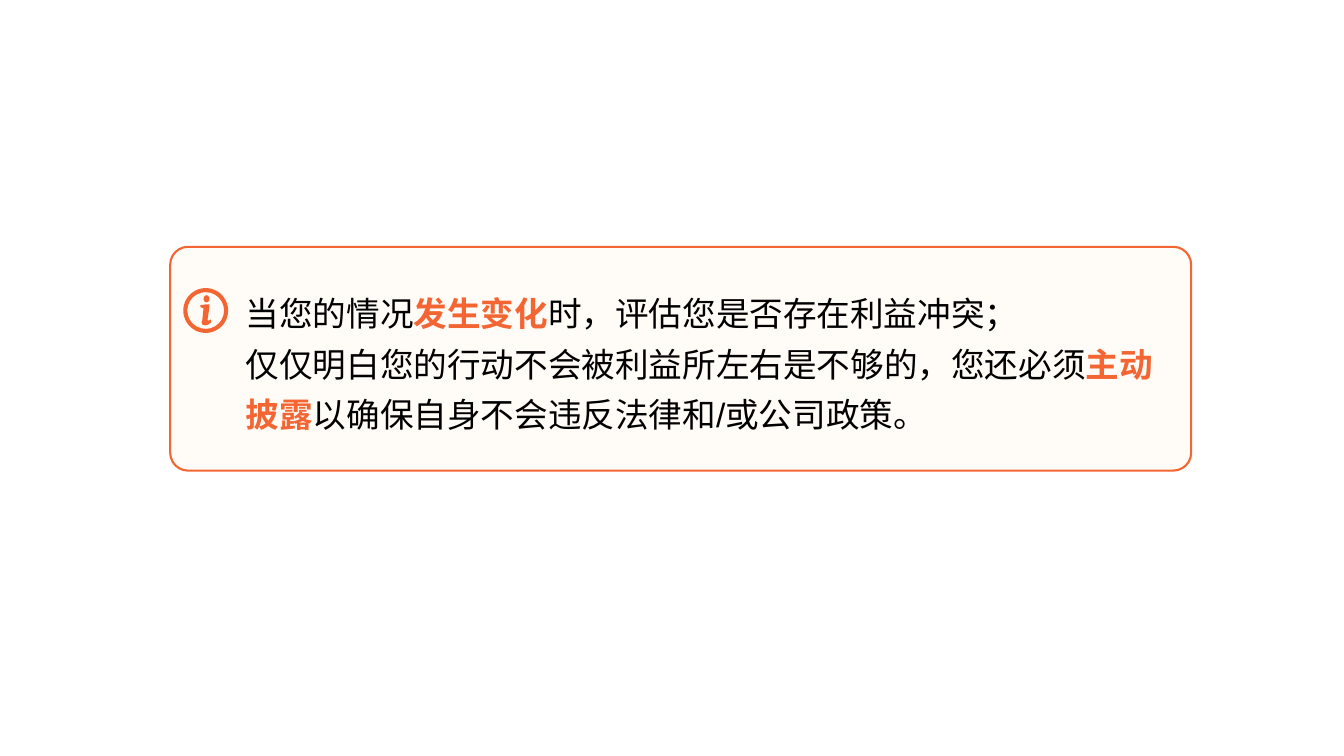
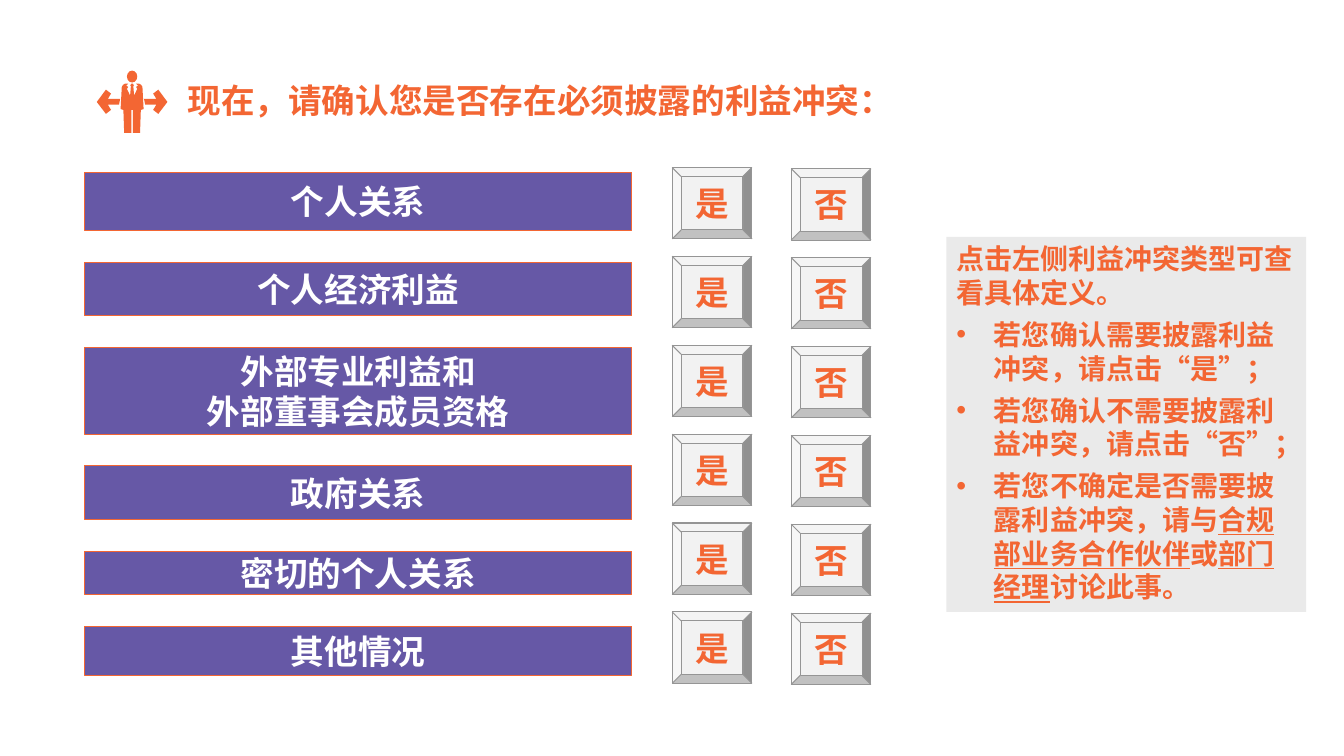
from lxml.etree import SubElement
from pptx import Presentation
from pptx.dml.color import RGBColor
from pptx.enum.shapes import MSO_SHAPE
from pptx.enum.text import MSO_ANCHOR, MSO_AUTO_SIZE, PP_ALIGN
from pptx.oxml.ns import qn
from pptx.util import Cm, Pt

FONT = "Arial"
ORANGE = "F36633"
PURPLE = "6658A6"
CREAM = "FFFCF7"
LIGHT_GREY = "EAEAEA"
BUTTON_GREY = "F2F2F2"
EDGE_GREY = "959595"
WHITE = "FFFFFF"
BLACK = "000000"

NOTICE = [
    [("当您的情况", False), ("发生变化", True), ("时，评估您是否存在利益冲突；", False)],
    [("仅仅明白您的行动不会被利益所左右是不够的，您还必须", False), ("主动披露", True),
     ("以确保自身不会违反法律和/或公司政策。", False)],
]
TITLE = "现在，请确认您是否存在必须披露的利益冲突："
# Label and bar height in cm
CONFLICT_TYPES = [
    ("个人关系", 1.47),
    ("个人经济利益", 1.35),
    ("外部专业利益和\n外部董事会成员资格", 2.18),
    ("政府关系", 1.35),
    ("密切的个人关系", 1.09),
    ("其他情况", 1.24),
]
GUIDE_LEAD = "点击左侧利益冲突类型可查看具体定义。"
# Each bullet is a list of text and underline pairs
GUIDE_BULLETS = [
    [("若您确认需要披露利益冲突，请点击“是”；", False)],
    [("若您确认不需要披露利益冲突，请点击“否”；", False)],
    [("若您不确定是否需要披露利益冲突，请与", False), ("合规部业务合作伙伴", True),
     ("或", False), ("部门经理", True), ("讨论此事。", False)],
]


def colour(value):
    return RGBColor.from_string(value)


def add_box(shapes, kind, left, top, width, height, fill, line=None, weight=0.75):
    box = shapes.add_shape(kind, Cm(left), Cm(top), Cm(width), Cm(height))
    style_box(box, fill, line, weight)
    return box


def style_box(box, fill, line=None, weight=0.75):
    box.shadow.inherit = False
    box.fill.solid()
    box.fill.fore_color.rgb = colour(fill)
    if line:
        box.line.color.rgb = colour(line)
        box.line.width = Pt(weight)
    else:
        box.line.fill.background()


def add_outline(shapes, left, top, points, fill):
    """Draw a closed outline from points in cm, measured from left and top."""
    corners = [(Cm(left + x), Cm(top + y)) for x, y in points]
    builder = shapes.build_freeform(*corners[0])
    builder.add_line_segments(corners[1:], close=True)
    style_box(builder.convert_to_shape(), fill)


def format_font(font, size, text_colour, bold):
    font.name = FONT
    font.size = Pt(size)
    font.bold = bold
    font.color.rgb = colour(text_colour)


def set_text(box, text, size, text_colour, align=PP_ALIGN.CENTER):
    box.text_frame.text = text
    for para in box.text_frame.paragraphs:
        para.alignment = align
        for span in para.runs:
            format_font(span.font, size, text_colour, True)


def next_paragraph(frame, first):
    para = frame.paragraphs[0] if first else frame.add_paragraph()
    para.alignment = PP_ALIGN.LEFT
    return para


def add_span(para, text):
    span = para.add_run()
    span.text = text
    return span


def add_info_icon(page, left, top):
    shapes = page.shapes.add_group_shape().shapes
    ring = add_box(shapes, MSO_SHAPE.DONUT, left, top, 1.13, 1.13, ORANGE)
    ring.adjustments[0] = 0.09
    add_box(shapes, MSO_SHAPE.OVAL, left + 0.51, top + 0.18, 0.15, 0.18, ORANGE)
    stem = [(0.43, 0.43), (0.58, 0.41), (0.66, 0.41), (0.66, 0.47), (0.61, 0.81),
            (0.64, 0.82), (0.69, 0.79), (0.71, 0.86), (0.63, 0.92), (0.56, 0.94),
            (0.48, 0.92), (0.46, 0.86), (0.48, 0.81), (0.51, 0.51), (0.43, 0.48)]
    add_outline(shapes, left, top, stem, ORANGE)


def add_person_icon(page, centre, top):
    shapes = page.shapes.add_group_shape().shapes
    add_box(shapes, MSO_SHAPE.OVAL, centre - 0.13, top, 0.26, 0.3, ORANGE)
    arrow = [(0.66, 0.48), (0.53, 0.58), (0.61, 0.71), (0.3, 0.71), (0.33, 0.86),
             (0.61, 0.86), (0.53, 0.99), (0.66, 1.09), (0.89, 0.79)]
    half_body = [(0.02, 0.33), (0.05, 0.38), (0.03, 0.38), (0.05, 0.63), (0.13, 0.46),
                 (0.1, 0.41), (0.15, 0.38), (0.1, 0.33), (0.18, 0.33), (0.23, 0.36),
                 (0.26, 0.41), (0.29, 0.97), (0.22, 0.99), (0.2, 1.57), (0.02, 1.57),
                 (0.02, 0.99)]
    for points in (arrow, mirror(arrow), half_body + mirror(half_body)):
        add_outline(shapes, centre, top, points, ORANGE)


def mirror(points):
    return [(-x, y) for x, y in reversed(points)]


def add_notice(page, left, top, width, height):
    box = add_box(page.shapes, MSO_SHAPE.ROUNDED_RECTANGLE, left, top, width, height,
                  CREAM, ORANGE, 1.5)
    box.adjustments[0] = 0.08
    frame = box.text_frame
    for index, spans in enumerate(NOTICE):
        para = next_paragraph(frame, index == 0)
        para.line_spacing = 1.25
        para._p.get_or_add_pPr().set("marL", str(Cm(1.52)))
        for text, strong in spans:
            format_font(add_span(para, text).font, 24, ORANGE if strong else BLACK, strong)
    add_info_icon(page, left + 0.33, top + 1.04)


def add_header(page, left, top):
    add_person_icon(page, left + 0.92, top)
    title = page.shapes.title
    title.left, title.top = Cm(left + 2.06), Cm(top + 0.1)
    title.width, title.height = Cm(19), Cm(1.27)
    set_text(title, TITLE, 24, ORANGE, PP_ALIGN.LEFT)
    title.text_frame.vertical_anchor = MSO_ANCHOR.TOP
    title.text_frame.auto_size = MSO_AUTO_SIZE.NONE


def add_type_bars(page, left, top, width, gap):
    for label, height in CONFLICT_TYPES:
        bar = add_box(page.shapes, MSO_SHAPE.RECTANGLE, left, top, width, height,
                      PURPLE, ORANGE)
        bar.text_frame.margin_top = bar.text_frame.margin_bottom = Cm(0.2)
        set_text(bar, label, 24, WHITE)
        top += height + gap


def add_answer_buttons(page, left, top, column_step, row_step):
    for row in range(len(CONFLICT_TYPES)):
        for column, answer in enumerate("是否"):
            button = add_box(page.shapes, MSO_SHAPE.BEVEL, left + column * column_step,
                             top + row * row_step + column * 0.03, 2.01, 1.8,
                             BUTTON_GREY, EDGE_GREY)
            frame = button.text_frame
            frame.margin_left = frame.margin_right = Cm(0.1)
            frame.margin_top = frame.margin_bottom = Cm(0.1)
            set_text(button, answer, 24, ORANGE)


def add_bullet(para, indent):
    properties = para._p.get_or_add_pPr()
    properties.set("marL", str(Cm(indent)))
    properties.set("indent", str(-Cm(indent)))
    SubElement(properties, qn("a:buFont")).set("typeface", FONT)
    SubElement(properties, qn("a:buChar")).set("char", "•")


def add_guide(page, left, top, width, height):
    box = add_box(page.shapes, MSO_SHAPE.RECTANGLE, left, top, width, height, LIGHT_GREY)
    frame = box.text_frame
    frame.vertical_anchor = MSO_ANCHOR.TOP
    for index, spans in enumerate([[(GUIDE_LEAD, False)]] + GUIDE_BULLETS):
        para = next_paragraph(frame, index == 0)
        para.space_after = Pt(6)
        if index:
            add_bullet(para, 0.95)
        for text, underlined in spans:
            font = add_span(para, text).font
            format_font(font, 20, ORANGE, True)
            font.underline = underlined


def build_notice_slide(deck):
    page = deck.slides.add_slide(deck.slide_layouts[6])
    add_notice(page, 4.29, 6.22, 25.73, 5.64)


def build_confirmation_slide(deck):
    page = deck.slides.add_slide(deck.slide_layouts[5])
    add_header(page, 2.41, 1.78)
    add_type_bars(page, 2.13, 4.34, 13.79, 0.8)
    add_guide(page, 23.85, 5.97, 9.07, 9.45)
    add_answer_buttons(page, 16.94, 4.22, 3, 2.24)


def main():
    deck = Presentation()
    deck.slide_width, deck.slide_height = Cm(33.87), Cm(19.05)
    build_notice_slide(deck)
    build_confirmation_slide(deck)
    deck.save("out.pptx")


if __name__ == "__main__":
    main()
